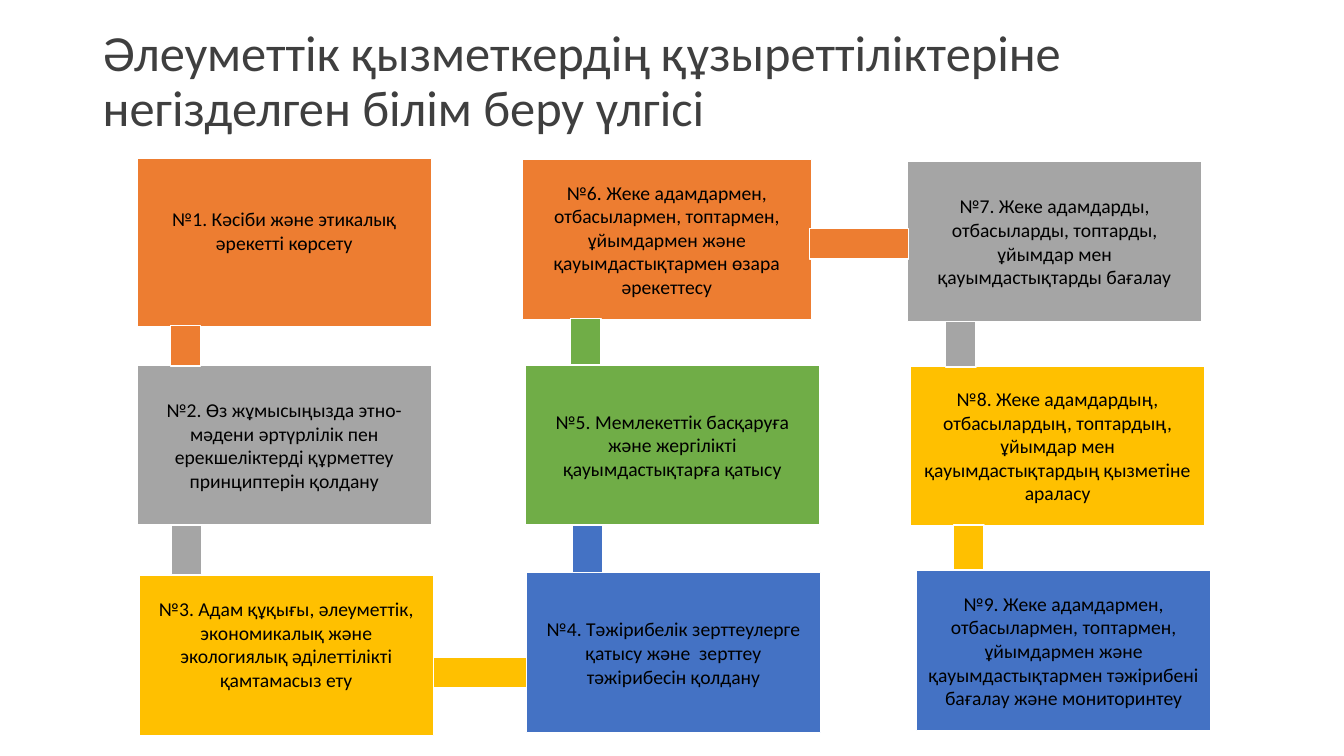
import pptx
import pptx.dml.color
import pptx.enum.shapes
import pptx.enum.text
import pptx.util

Inches = pptx.util.Inches
ALIGN = pptx.enum.text.PP_ALIGN

TITLE = "Әлеуметтік қызметкердің құзыреттіліктеріне негізделген білім беру үлгісі"
PALETTE = ["ED7D31", "A5A5A5", "FFC000", "4472C4", "70AD47"]
BOX_W, BOX_H = 2.92, 1.59
LINK = 0.3
LINE_GAP = 0.23

COMPETENCES = [
    (1.36, 1.57, BOX_W, 1.67, "Кәсіби және этикалық әрекетті көрсету"),
    (1.36, 3.62, BOX_W, BOX_H,
     "Өз жұмысыңызда этно-мәдени әртүрлілік пен ерекшеліктерді құрметтеу принциптерін қолдану"),
    (1.38, 5.71, BOX_W, BOX_H,
     "Адам құқығы, әлеуметтік, экономикалық және экологиялық әділеттілікті қамтамасыз ету"),
    (5.22, 5.68, BOX_W, BOX_H,
     "Тәжірибелік зерттеулерге қатысу және  зерттеу тәжірибесін қолдану"),
    (5.21, 3.62, BOX_W, BOX_H,
     "Мемлекеттік басқаруға және жергілікті қауымдастықтарға қатысу"),
    (5.18, 1.58, 2.87, BOX_H,
     "Жеке адамдармен, отбасылармен, топтармен, ұйымдармен және қауымдастықтармен өзара әрекеттесу"),
    (9.0, 1.6, BOX_W, BOX_H,
     "Жеке адамдарды, отбасыларды, топтарды, ұйымдар мен қауымдастықтарды бағалау"),
    (9.03, 3.63, BOX_W, BOX_H,
     "Жеке адамдардың, отбасылардың, топтардың, ұйымдар мен қауымдастықтардың қызметіне араласу"),
    (9.09, 5.66, BOX_W, BOX_H,
     "Жеке адамдармен, отбасылармен, топтармен, ұйымдармен және қауымдастықтармен тәжірибені "
     "бағалау және мониторинтеу"),
]
RAISED = {1, 3}

LINKS = [
    (1.69, 3.23, LINK, 0.4),
    (1.7, 5.21, LINK, 0.49),
    (4.3, 6.52, 0.92, LINK),
    (5.68, 5.21, LINK, 0.47),
    (5.66, 3.16, LINK, 0.46),
    (8.03, 2.27, 0.98, LINK),
    (9.38, 3.19, LINK, 0.45),
    (9.46, 5.21, LINK, 0.44),
]


def rgb(color):
    """Turn a hex string into a colour."""
    return pptx.dml.color.RGBColor.from_string(color)


def write(sp, text, size=14, color="000000", align=ALIGN.CENTER, spacing=1.0, bottom=0.05):
    """Put formatted text in a shape, centred vertically above the bottom inset."""
    tf = sp.text_frame
    tf.word_wrap = True
    tf.vertical_anchor = pptx.enum.text.MSO_ANCHOR.MIDDLE
    tf.margin_left = tf.margin_right = Inches(0.1)
    tf.margin_top, tf.margin_bottom = Inches(0.05), Inches(bottom)
    p = tf.paragraphs[0]
    p.alignment = align
    p.line_spacing = spacing
    r = p.add_run()
    r.text = text
    r.font.name = "Calibri"
    r.font.size = pptx.util.Pt(size)
    r.font.color.rgb = rgb(color)


def add_title(s, text):
    """Add the slide title."""
    sp = s.shapes.add_textbox(Inches(0.92), Inches(0.21), Inches(11.5), Inches(1.22))
    write(sp, text, size=36, color="3F3F3F", align=ALIGN.LEFT, spacing=0.9)


def add_rect(s, x, y, w, h, fill):
    """Add a filled rectangle with a thin white outline."""
    sp = s.shapes.add_shape(pptx.enum.shapes.MSO_SHAPE.RECTANGLE,
                            Inches(x), Inches(y), Inches(w), Inches(h))
    sp.shadow.inherit = False
    sp.fill.solid()
    sp.fill.fore_color.rgb = rgb(fill)
    sp.line.color.rgb = rgb("FFFFFF")
    sp.line.width = pptx.util.Pt(1)
    return sp


def main():
    """Build the slide of nine linked competences."""
    prs = pptx.Presentation()
    prs.slide_width, prs.slide_height = Inches(13.33), Inches(7.5)
    s = prs.slides.add_slide(prs.slide_layouts[6])
    add_title(s, TITLE)
    for i, (x, y, w, h, text) in enumerate(COMPETENCES):
        number = i + 1
        sp = add_rect(s, x, y, w, h, PALETTE[i % len(PALETTE)])
        write(sp, f"№{number}. {text}", bottom=0.05 + LINE_GAP * (number in RAISED))
    for i, (x, y, w, h) in enumerate(LINKS):
        add_rect(s, x, y, w, h, PALETTE[i % len(PALETTE)])
    prs.save("out.pptx")


if __name__ == "__main__":
    main()
